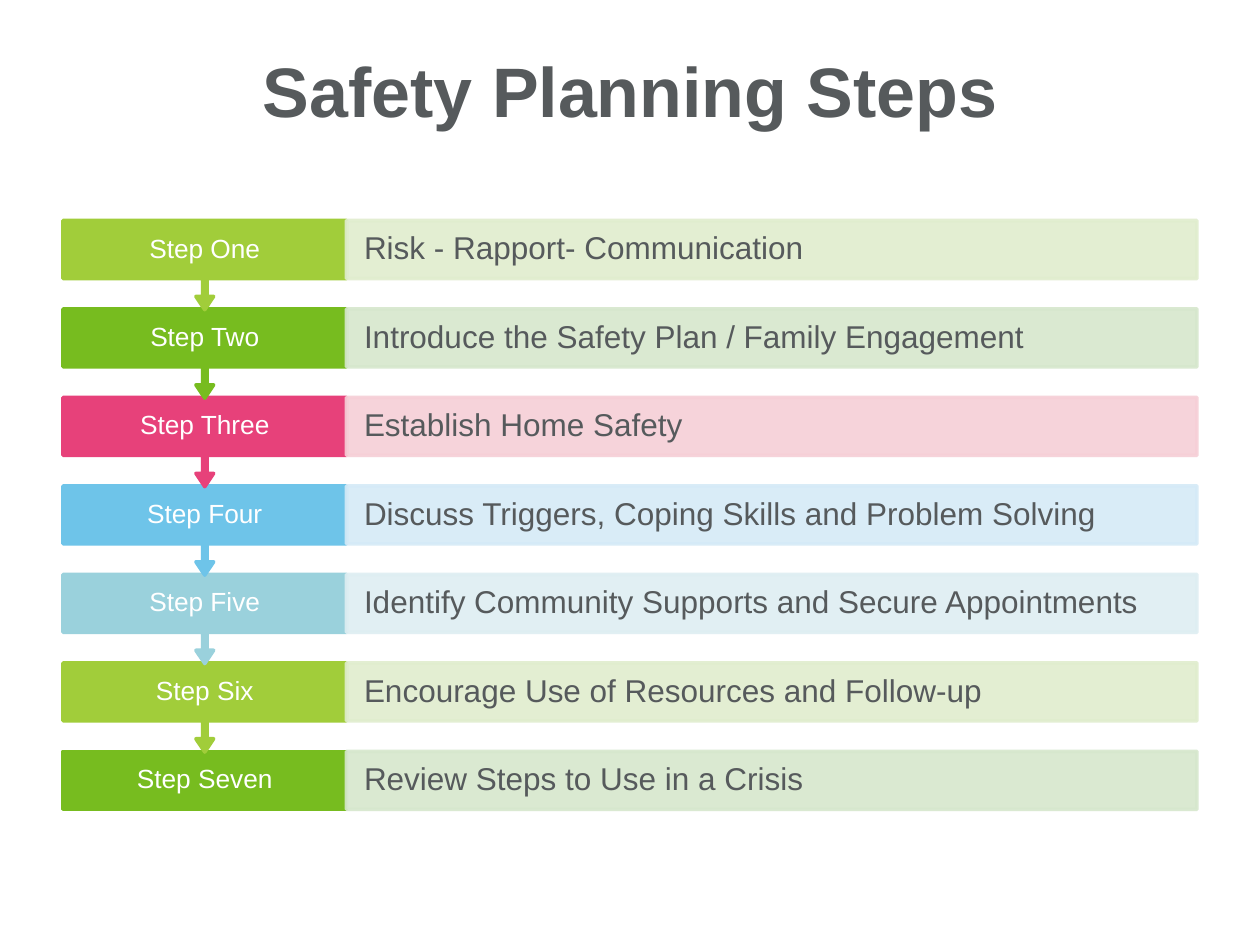
from lxml.etree import SubElement
from pptx import Presentation
from pptx.dml.color import RGBColor
from pptx.enum.shapes import MSO_SHAPE as Shape
from pptx.enum.text import MSO_ANCHOR as Anchor, PP_ALIGN as Align
from pptx.oxml.ns import qn
from pptx.util import Pt

theme = {
    "font": "Arial", "head": 40, "step": 15, "body": 18,
    "ink": "565A5C", "white": "FFFFFF",
    "lime": ("A1CD3A", "E0EDCE"), "green": ("77BC1F", "D6E7CD"),
    "pink": ("E7417A", "F6CFD7"), "blue": ("6EC4E9", "D5EAF7"),
    "teal": ("9AD1DC", "DEEEF2"),
}
steps = [
    ("Step One", "Risk - Rapport- Communication", "lime"),
    ("Step Two", "Introduce the Safety Plan / Family Engagement", "green"),
    ("Step Three", "Establish Home Safety", "pink"),
    ("Step Four", "Discuss Triggers, Coping Skills and Problem Solving", "blue"),
    ("Step Five", "Identify Community Supports and Secure Appointments", "teal"),
    ("Step Six", "Encourage Use of Resources and Follow-up", "lime"),
    ("Step Seven", "Review Steps to Use in a Crisis", "green"),
]


def paint(shape, color, alpha=100):
    shape.shadow.inherit = False
    shape.line.width = Pt(2)
    for fill in (shape.fill, shape.line.fill):
        fill.solid()
        fill.fore_color.rgb = RGBColor.from_string(color)
    if alpha < 100:
        for node in shape._element.spPr.iter(qn("a:srgbClr")):
            SubElement(node, qn("a:alpha"), val=str(alpha * 1000))


def write(shape, text, size, color, align, inset, space=0.9):
    frame = shape.text_frame
    frame.word_wrap = True
    frame.vertical_anchor = Anchor.MIDDLE
    frame.margin_left = frame.margin_right = Pt(inset)
    frame.margin_top = frame.margin_bottom = 0
    para = frame.paragraphs[0]
    para.text = text
    para.alignment = align
    para.line_spacing = space
    para.font.name = theme["font"]
    para.font.size = Pt(theme[size])
    para.font.color.rgb = RGBColor.from_string(theme[color])
    return para


deck = Presentation()
deck.slide_width, deck.slide_height = Pt(720), Pt(540)
slide = deck.slides.add_slide(deck.slide_layouts[6])
shapes = slide.shapes

title = shapes.add_textbox(Pt(36), Pt(6), Pt(648), Pt(90))
write(title, "Safety Planning Steps", "head", "ink", Align.CENTER, 7.2, 1).font.bold = True

left, top, pitch = 36, 126, 50.55
tag, band, high, tall = 162, 486, 33.2, 51
last = len(steps) - 1

for row, (name, task, hue) in reversed(list(enumerate(steps))):
    dark, pale = theme[hue]
    y = Pt(top + row * pitch)
    if row == last:
        label = shapes.add_shape(Shape.RECTANGLE, Pt(left), y, Pt(tag), Pt(high))
        paint(label, dark)
    else:
        arrow = shapes.add_shape(Shape.UP_ARROW_CALLOUT, Pt(left), y, Pt(tag), Pt(tall))
        arrow.rotation = 180
        for i, value in enumerate((0.05, 0.1, 0.15, 0.65)):
            arrow.adjustments[i] = value
        paint(arrow, dark)
        label = shapes.add_textbox(Pt(left), y, Pt(tag), Pt(high))
    write(label, name, "step", "white", Align.CENTER, 11.5)
    bar = shapes.add_shape(Shape.RECTANGLE, Pt(left + tag), y, Pt(band), Pt(high))
    paint(bar, pale, 90)
    write(bar, task, "body", "ink", Align.LEFT, 10)

deck.save("out.pptx")
